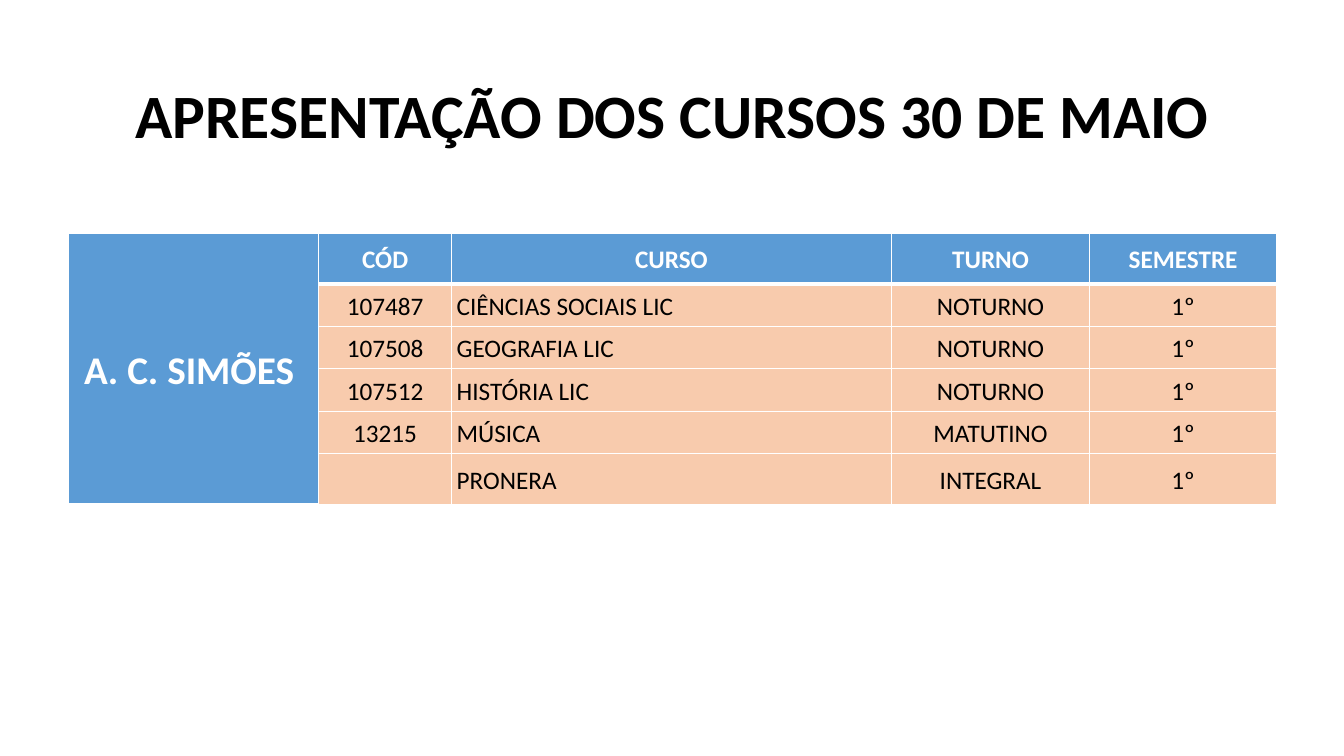
from lxml import etree
from pptx import Presentation
from pptx.dml.color import RGBColor
from pptx.enum.text import MSO_ANCHOR, PP_ALIGN
from pptx.oxml.ns import qn
from pptx.util import Inches, Pt

LEFT, CENTER = PP_ALIGN.LEFT, PP_ALIGN.CENTER
TOP, MIDDLE = MSO_ANCHOR.TOP, MSO_ANCHOR.MIDDLE
BLUE = RGBColor(0x5B, 0x9B, 0xD5)
PEACH = RGBColor(0xF8, 0xCB, 0xAD)
WHITE = RGBColor(0xFF, 0xFF, 0xFF)
BLACK = RGBColor(0, 0, 0)

CAMPUS = "A. C. SIMÕES "
HEADS = ["CÓD", "CURSO", "TURNO", "SEMESTRE"]
COURSES = [
    ["107487", "CIÊNCIAS SOCIAIS LIC", "NOTURNO", "1º"],
    ["107508", "GEOGRAFIA LIC", "NOTURNO", "1º"],
    ["107512", "HISTÓRIA LIC", "NOTURNO", "1º"],
    ["13215", "MÚSICA", "MATUTINO", "1º"],
    ["", "PRONERA", "INTEGRAL", "1º"],
]
WIDTHS = [2.48, 1.32, 4.36, 1.97, 1.85]
HEIGHTS = [0.5] + [0.42] * 4 + [0.5]


def set_font(para, size, color, bold):
    font = para.font
    font.name, font.size, font.bold = "Calibri", Pt(size), bold
    font.color.rgb = color


def set_edges(cell, bottom):
    """Draw white borders, 1 pt wide except for the bottom one."""
    props = cell._tc.get_or_add_tcPr()
    widths = {"lnL": 1, "lnR": 1, "lnT": 1, "lnB": bottom}
    for place, (tag, width) in enumerate(widths.items()):
        line = etree.Element(qn(f"a:{tag}"), w=str(Pt(width)))
        fill = etree.SubElement(line, qn("a:solidFill"))
        etree.SubElement(fill, qn("a:srgbClr"), val=str(WHITE))
        props.insert(place, line)


def fill_cell(cell, text, size=18, head=False, align=CENTER):
    cell.fill.solid()
    cell.fill.fore_color.rgb = BLUE if head else PEACH
    cell.vertical_anchor = MIDDLE
    cell.margin_left = cell.margin_right = Inches(0.05)
    cell.margin_top = Inches(0 if head else 0.01)
    cell.margin_bottom = 0
    cell.text = text
    para = cell.text_frame.paragraphs[0]
    para.alignment, para.line_spacing = align, 1.07
    set_font(para, size, WHITE if head else BLACK, head)
    set_edges(cell, 3 if head else 1)


def add_title(slide, left, top, width, height):
    title = slide.shapes.title
    title.left, title.top = Inches(left), Inches(top)
    title.width, title.height = Inches(width), Inches(height)
    frame = title.text_frame
    frame.text = "APRESENTAÇÃO DOS CURSOS 30 DE MAIO"
    frame.vertical_anchor, frame.word_wrap = TOP, True
    para = frame.paragraphs[0]
    para.alignment, para.line_spacing = CENTER, 0.9
    set_font(para, 44, BLACK, True)


def add_courses(slide, left, top):
    table = slide.shapes.add_table(
        len(HEIGHTS), len(WIDTHS), Inches(left), Inches(top),
        Inches(sum(WIDTHS)), Inches(sum(HEIGHTS))).table
    for col, width in zip(table.columns, WIDTHS):
        col.width = Inches(width)
    for row, height in zip(table.rows, HEIGHTS):
        row.height = Inches(height)

    campus = table.cell(0, 0)
    campus.merge(table.cell(len(COURSES), 0))
    fill_cell(campus, CAMPUS, 28, head=True)
    for r, values in enumerate([HEADS] + COURSES):
        for c, text in enumerate(values, 1):
            align = LEFT if r and c == 2 else CENTER
            fill_cell(table.cell(r, c), text, head=r == 0, align=align)


def main():
    deck = Presentation()
    deck.slide_width, deck.slide_height = Inches(13.33), Inches(7.5)
    slide = deck.slides.add_slide(deck.slide_layouts.get_by_name("Title Only"))
    add_courses(slide, 0.68, 2.32)
    add_title(slide, 0.92, 0.8, 11.5, 0.97)
    deck.save("out.pptx")


if __name__ == "__main__":
    main()
